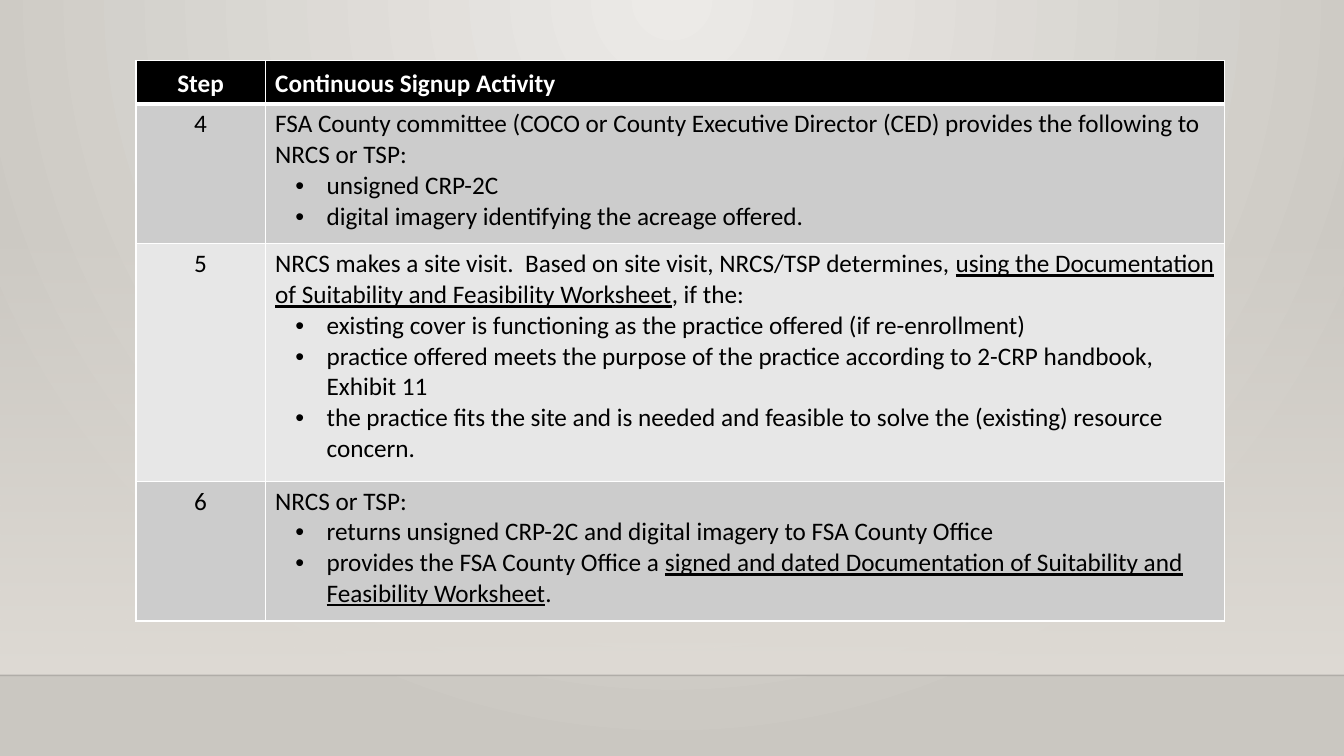
import lxml.etree
import pptx
import pptx.dml.color
import pptx.enum.shapes
import pptx.enum.text
import pptx.oxml
import pptx.oxml.ns
import pptx.util

Pt = pptx.util.Pt
RGBColor = pptx.dml.color.RGBColor
qn = pptx.oxml.ns.qn

BLACK = RGBColor(0x00, 0x00, 0x00)
WHITE = RGBColor(0xFF, 0xFF, 0xFF)
DARK_BAND = RGBColor(0xCC, 0xCC, 0xCC)
LIGHT_BAND = RGBColor(0xE7, 0xE7, 0xE7)
PALE_STONE = RGBColor(0xEC, 0xEA, 0xE7)
DEEP_STONE = RGBColor(0xCA, 0xC7, 0xC1)
WALL = RGBColor(0xDF, 0xDB, 0xD5)

WIDTH, HEIGHT = 960, 540
FLOOR_TOP = 482.4
WALL_TOP = 159.1

RADIAL = '<a:path path="circle"><a:fillToRect l="43000" t="0" r="43000" b="100000"/></a:path>'
DOWNWARD = '<a:lin ang="5400000" scaled="0"/>'

HEADER = ("Step", "Continuous Signup Activity")
STEPS = [
    ("4",
     [("FSA County committee (COCO or County Executive Director (CED) provides "
       "the following to NRCS or TSP:", False)],
     [[("unsigned CRP-2C", False)],
      [("digital imagery identifying the acreage offered.", False)]]),
    ("5",
     [("NRCS makes a site visit.  Based on site visit, NRCS/TSP determines, ", False),
      ("using the Documentation of Suitability and Feasibility Worksheet", True),
      (", if the:", False)],
     [[("existing cover is functioning as the practice offered (if re-enrollment)", False)],
      [("practice offered meets the purpose of the practice according to 2-CRP "
        "handbook, Exhibit 11", False)],
      [("the practice fits the site and is needed and feasible to solve the "
        "(existing) resource concern.", False)]]),
    ("6",
     [("NRCS or TSP:", False)],
     [[("returns unsigned CRP-2C and digital imagery to FSA County Office", False)],
      [("provides the FSA County Office a ", False),
       ("signed and dated Documentation of Suitability and Feasibility Worksheet", True),
       (".", False)]]),
]


class SlideBuilder:
    font = "Calibri"
    size = 18

    def __init__(self, page):
        self.page = page

    def apply_gradient(self, properties, stops, direction):
        marks = "".join(
            f'<a:gs pos="{position * 1000}"><a:srgbClr val="{color}">'
            f'<a:alpha val="{alpha * 1000}"/></a:srgbClr></a:gs>'
            for position, color, alpha in stops)
        gradient = pptx.oxml.parse_xml(
            f'<a:gradFill {pptx.oxml.ns.nsdecls("a")} rotWithShape="1">'
            f'<a:gsLst>{marks}</a:gsLst>{direction}</a:gradFill>')
        properties.replace(properties.find(qn("a:solidFill")), gradient)

    def background(self, stops):
        self.page.background.fill.solid()
        properties = self.page.element.find(".//" + qn("p:bgPr"))
        self.apply_gradient(properties, stops, RADIAL)

    def gradient_panel(self, left, top, width, height, stops):
        panel = self.page.shapes.add_shape(
            pptx.enum.shapes.MSO_SHAPE.RECTANGLE, Pt(left), Pt(top), Pt(width), Pt(height))
        panel.shadow.inherit = False
        panel.line.fill.background()
        panel.fill.solid()
        self.apply_gradient(panel.element.spPr, stops, DOWNWARD)

    def line(self, left, top, right, bottom, color, weight, opacity):
        line = self.page.shapes.add_connector(
            pptx.enum.shapes.MSO_CONNECTOR.STRAIGHT, Pt(left), Pt(top), Pt(right), Pt(bottom))
        line.line.color.rgb = color
        line.line.width = Pt(weight)
        properties = line.element.spPr
        tint = properties.find(".//" + qn("a:srgbClr"))
        lxml.etree.SubElement(tint, qn("a:alpha"), val=str(opacity * 1000))
        lxml.etree.SubElement(properties, qn("a:effectLst"))

    def table(self, left, top, widths, heights):
        frame = self.page.shapes.add_table(
            len(heights), len(widths), Pt(left), Pt(top), Pt(sum(widths)), Pt(sum(heights)))
        for column, width in zip(frame.table.columns, widths):
            column.width = Pt(width)
        for row, height in zip(frame.table.rows, heights):
            row.height = Pt(height)
        return frame.table

    def style_cell(self, cell, fill, top=1, bottom=1):
        properties = cell._tc.get_or_add_tcPr()
        for side, weight in (("L", 1), ("R", 1), ("T", top), ("B", bottom)):
            border = lxml.etree.SubElement(properties, qn("a:ln" + side), w=str(Pt(weight)))
            paint = lxml.etree.SubElement(border, qn("a:solidFill"))
            lxml.etree.SubElement(paint, qn("a:srgbClr"), val=str(WHITE))
        cell.fill.solid()
        cell.fill.fore_color.rgb = fill

    def add_spans(self, para, spans, color=BLACK, bold=False, centered=False, bullet=False):
        if bullet:
            properties = para._p.get_or_add_pPr()
            properties.set("marL", str(Pt(36.7)))
            properties.set("indent", str(Pt(-22.3)))
            lxml.etree.SubElement(properties, qn("a:buFont"), typeface="Arial")
            lxml.etree.SubElement(properties, qn("a:buChar"), char="•")
        if centered:
            para.alignment = pptx.enum.text.PP_ALIGN.CENTER
        for text, underlined in spans:
            span = para.add_run()
            span.text = text
            span.font.name = self.font
            span.font.size = Pt(self.size)
            span.font.bold = bold
            span.font.underline = underlined
            span.font.color.rgb = color


def main():
    deck = pptx.Presentation()
    deck.slide_width, deck.slide_height = Pt(WIDTH), Pt(HEIGHT)
    page = deck.slides.add_slide(deck.slide_layouts[6])
    builder = SlideBuilder(page)

    builder.background([(0, PALE_STONE, 100), (100, DEEP_STONE, 100)])
    builder.gradient_panel(0, WALL_TOP, WIDTH, FLOOR_TOP - WALL_TOP,
                           [(0, WALL, 0), (100, WALL, 100)])
    builder.line(0, FLOOR_TOP, WIDTH, FLOOR_TOP, BLACK, 1, 20)

    table = builder.table(97.2, 43.2, [92.2, 685.4], [31, 100, 169.5, 100])
    for column, title in enumerate(HEADER):
        cell = table.cell(0, column)
        builder.style_cell(cell, BLACK, bottom=3)
        cell.vertical_anchor = pptx.enum.text.MSO_ANCHOR.BOTTOM
        builder.add_spans(cell.text_frame.paragraphs[0], [(title, False)],
                          color=WHITE, bold=True, centered=column == 0)

    for row, (number, intro, items) in enumerate(STEPS, start=1):
        step, activity = table.cell(row, 0), table.cell(row, 1)
        for cell in (step, activity):
            builder.style_cell(cell, DARK_BAND if row % 2 else LIGHT_BAND,
                               top=3 if row == 1 else 1)
        builder.add_spans(step.text_frame.paragraphs[0], [(number, False)], centered=True)
        builder.add_spans(activity.text_frame.paragraphs[0], intro)
        for item in items:
            builder.add_spans(activity.text_frame.add_paragraph(), item, bullet=True)

    deck.save("out.pptx")


if __name__ == "__main__":
    main()
